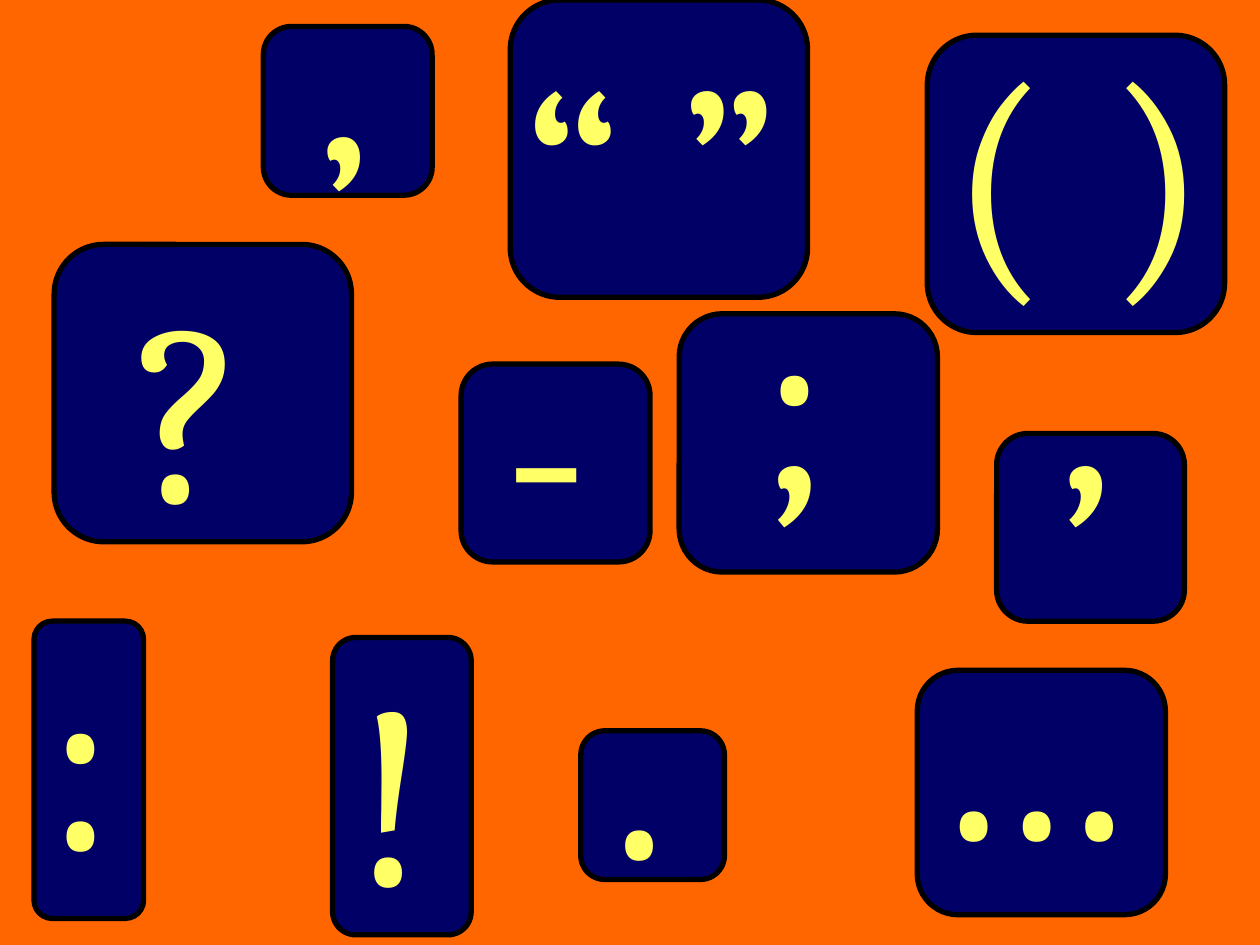
"""Build a slide of punctuation marks on rounded tiles."""
from pptx import Presentation
from pptx.dml.color import RGBColor
from pptx.enum.shapes import MSO_SHAPE as SHAPE
from pptx.enum.text import MSO_AUTO_SIZE as FIT, MSO_ANCHOR as ANCHOR, PP_ALIGN as ALIGN
from pptx.util import Inches, Pt


def paint(fill, color):
    fill.solid()
    fill.fore_color.rgb = RGBColor.from_string(color)


prs = Presentation()
prs.slide_width, prs.slide_height = Inches(10), Inches(7.5)
COL, ROW = prs.slide_width // 1000, prs.slide_height // 750
MARK_ROWS = 260
FRAME = {"word_wrap": True, "auto_size": FIT.SHAPE_TO_FIT_TEXT, "vertical_anchor": ANCHOR.TOP}
FONT = {"name": "Cambria", "size": Pt(150)}

s = prs.slides.add_slide(prs.slide_layouts[6])
paint(s.background.fill, "FF6600")

tiles = [
    ("!", (264, 506, 110, 236), (272, 490, 149)),
    (".", (461, 580, 114, 118), (476, 469, 149)),
    ("’", (209, 21, 134, 134), (240, 36, 149)),
    (",", (791, 344, 149, 149), (831, 178, 149)),
    ("“ ”", (405, 0, 236, 236), (406, 0, 260)),
    ("…", (728, 532, 197, 194), (728, 454, 181)),
    ("( )", (736, 28, 236, 236), (744, 0, 256)),
    (":", (27, 493, 87, 236), (27, 462, 149)),
    (";", (539, 249, 205, 205), (594, 178, 149)),
    ("-", (366, 289, 150, 157), (390, 218, 149)),
    ("?", (43, 194, 236, 236), (98, 186, 149)),
]

for mark, (x, y, w, h), (mark_x, mark_y, mark_w) in tiles:
    group = s.shapes.add_group_shape()
    sp = group.shapes.add_shape(SHAPE.ROUNDED_RECTANGLE, x * COL, y * ROW, w * COL, h * ROW)
    sp.adjustments[0] = 1 / 6
    sp.shadow.inherit = False
    paint(sp.fill, "000066")
    paint(sp.line.fill, "000000")
    sp.line.width = Pt(3)

    box = group.shapes.add_textbox(mark_x * COL, mark_y * ROW, mark_w * COL, MARK_ROWS * ROW)
    tf = box.text_frame
    for name, value in FRAME.items():
        setattr(tf, name, value)
    p = tf.paragraphs[0]
    p.alignment = ALIGN.LEFT
    r = p.add_run()
    r.text = mark
    for name, value in FONT.items():
        setattr(r.font, name, value)
    paint(r.font.fill, "FFFF66")

prs.save("out.pptx")
